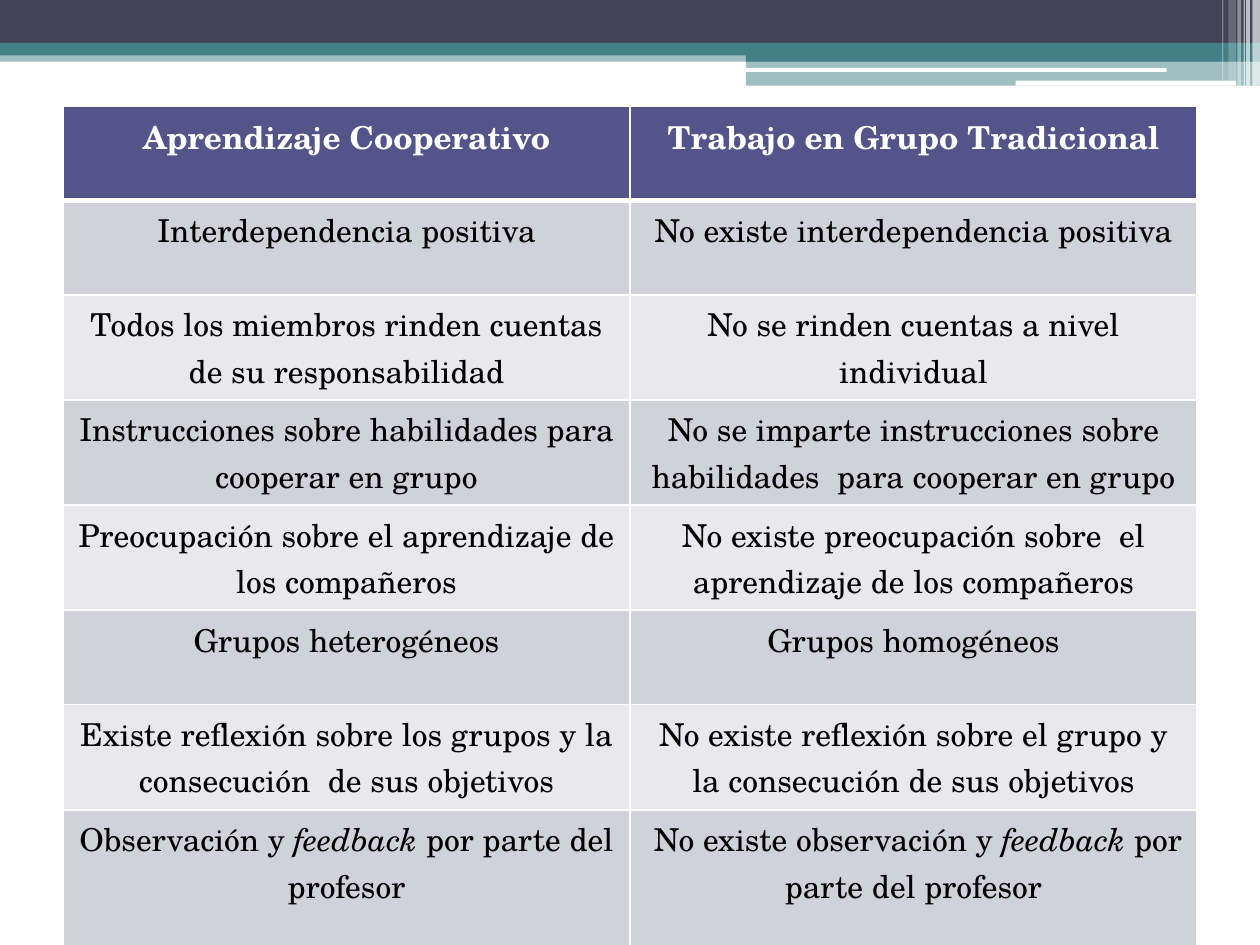
from typing import NamedTuple

from lxml.etree import SubElement
from pptx import Presentation
from pptx.dml.color import RGBColor as RGB
from pptx.enum.shapes import MSO_SHAPE as Shape
from pptx.enum.text import PP_ALIGN as Align
from pptx.oxml.ns import qn
from pptx.util import Inches, Pt

COLORS = {
    "slate": "424456", "teal": "438086", "white": "FFFFFF", "black": "000000",
    "header": "53548A", "band_dark": "D1D1DA", "band_light": "E9E9ED",
}
FONT = "TeX Gyre Schola"


class Bar(NamedTuple):
    left: float
    top: float
    width: float
    height: float
    color: str
    opacity: int = 100
    kind: Shape = Shape.RECTANGLE


# Header band, right-hand step, white slots, then the vertical stripes
BARS = [
    Bar(0, 0.4, 10, 0.09, "teal", 50),
    Bar(0, 0, 10, 0.34, "slate"),
    Bar(0, 0.34, 10, 0.1, "teal"),
    Bar(5.92, 0.39, 4.08, 0.1, "teal"),
    Bar(5.92, 0.48, 4.08, 0.2, "teal", 50),
    Bar(5.91, 0.54, 3.35, 0.03, "white", kind=Shape.ROUNDED_RECTANGLE),
    Bar(8.06, 0.64, 1.75, 0.04, "white", kind=Shape.ROUNDED_RECTANGLE),
    Bar(9.94, 0, 0.06, 0.68, "white", 65),
    Bar(9.89, 0, 0.03, 0.68, "white", 65),
    Bar(9.87, 0, 0.01, 0.68, "white", 60),
    Bar(9.82, 0, 0.03, 0.68, "white", 40),
    Bar(9.75, 0, 0.06, 0.64, "white", 20),
    Bar(9.7, 0, 0.01, 0.64, "white", 30),
]

# Asterisks enclose italic words
ROWS = [
    ("Aprendizaje Cooperativo", "Trabajo en Grupo Tradicional"),
    ("Interdependencia positiva", "No existe interdependencia positiva"),
    ("Todos los miembros rinden cuentas de su responsabilidad",
     "No se rinden cuentas a nivel individual"),
    ("Instrucciones sobre habilidades para cooperar en grupo",
     "No se imparte instrucciones sobre habilidades  para cooperar en grupo"),
    ("Preocupación sobre el aprendizaje de los compañeros",
     "No existe preocupación sobre  el aprendizaje de los compañeros"),
    ("Grupos heterogéneos", "Grupos homogéneos"),
    ("Existe reflexión sobre los grupos y la consecución  de sus objetivos",
     "No existe reflexión sobre el grupo y la consecución de sus objetivos"),
    ("Observación y *feedback *por parte del profesor",
     " No existe observación y *feedback *por parte del profesor"),
]
ROW_HEIGHT, LAST_ROW_HEIGHT = 0.75, 1.08


def rgb(name: str) -> RGB:
    return RGB.from_string(COLORS[name])


def draw_bar(slide, bar: Bar) -> None:
    sp = slide.shapes.add_shape(bar.kind, Inches(bar.left), Inches(bar.top),
                                Inches(bar.width), Inches(bar.height))
    sp.shadow.inherit = False
    sp.line.fill.background()
    sp.fill.solid()
    sp.fill.fore_color.rgb = rgb(bar.color)
    if bar.opacity < 100:
        color = sp.fill._xPr.find(".//" + qn("a:srgbClr"))
        SubElement(color, qn("a:alpha"), val=str(bar.opacity * 1000))


def write_text(tf, text: str, *, color: str, bold: bool = False,
               size: float = 18, align: Align = Align.CENTER) -> None:
    p = tf.paragraphs[0]
    p.alignment = align
    for i, part in enumerate(text.split("*")):
        r = p.add_run()
        r.text = part
        r.font.name, r.font.size = FONT, Pt(size)
        r.font.bold, r.font.italic = bold, i % 2 == 1
        r.font.color.rgb = rgb(color)


def set_borders(cell, top: float, bottom: float) -> None:
    tcPr = cell._tc.get_or_add_tcPr()
    for side, width in (("L", 1), ("R", 1), ("T", top), ("B", bottom)):
        ln = SubElement(tcPr, qn(f"a:ln{side}"), w=str(Pt(width)))
        fill = SubElement(ln, qn("a:solidFill"))
        SubElement(fill, qn("a:srgbClr"), val=COLORS["white"])


def draw_table(slide, rows: list[tuple[str, str]]) -> None:
    table = slide.shapes.add_table(
        len(rows), 2, Inches(0.5), Inches(0.84), Inches(9),
        Inches(ROW_HEIGHT * len(rows))).table
    for i, texts in enumerate(rows):
        last = i == len(rows) - 1
        table.rows[i].height = Inches(LAST_ROW_HEIGHT if last else ROW_HEIGHT)
        header = i == 0
        band = "header" if header else "band_dark" if i % 2 else "band_light"
        for j, text in enumerate(texts):
            cell = table.cell(i, j)
            set_borders(cell, top=3 if i == 1 else 1, bottom=3 if header else 1)
            cell.fill.solid()
            cell.fill.fore_color.rgb = rgb(band)
            write_text(cell.text_frame, text, bold=header,
                       color="white" if header else "black")


def main() -> None:
    prs = Presentation()
    prs.slide_width, prs.slide_height = Inches(10), Inches(7.5)
    s = prs.slides.add_slide(prs.slide_layouts[6])
    for bar in BARS:
        draw_bar(s, bar)
    draw_table(s, ROWS)
    prs.save("out.pptx")


if __name__ == "__main__":
    main()
